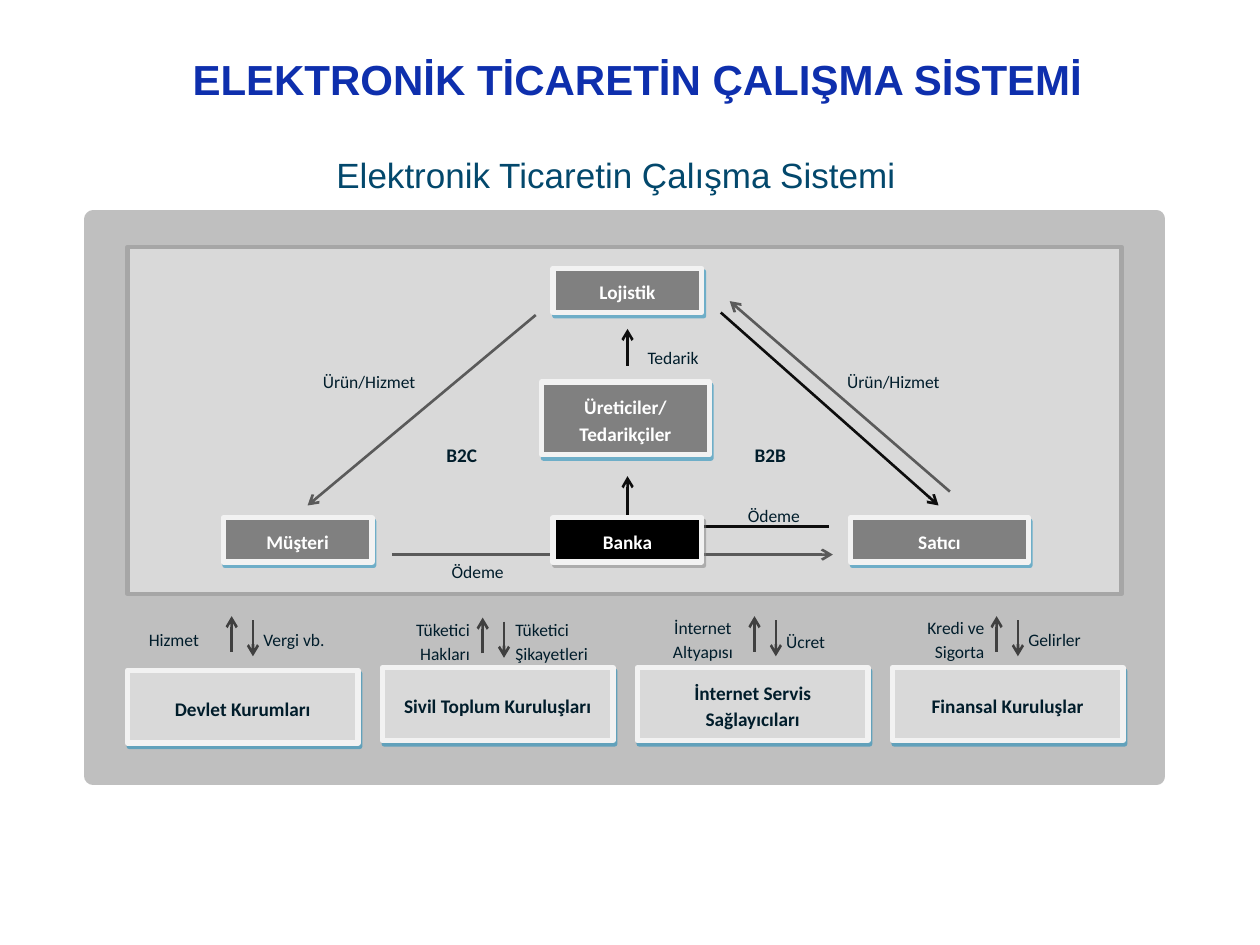
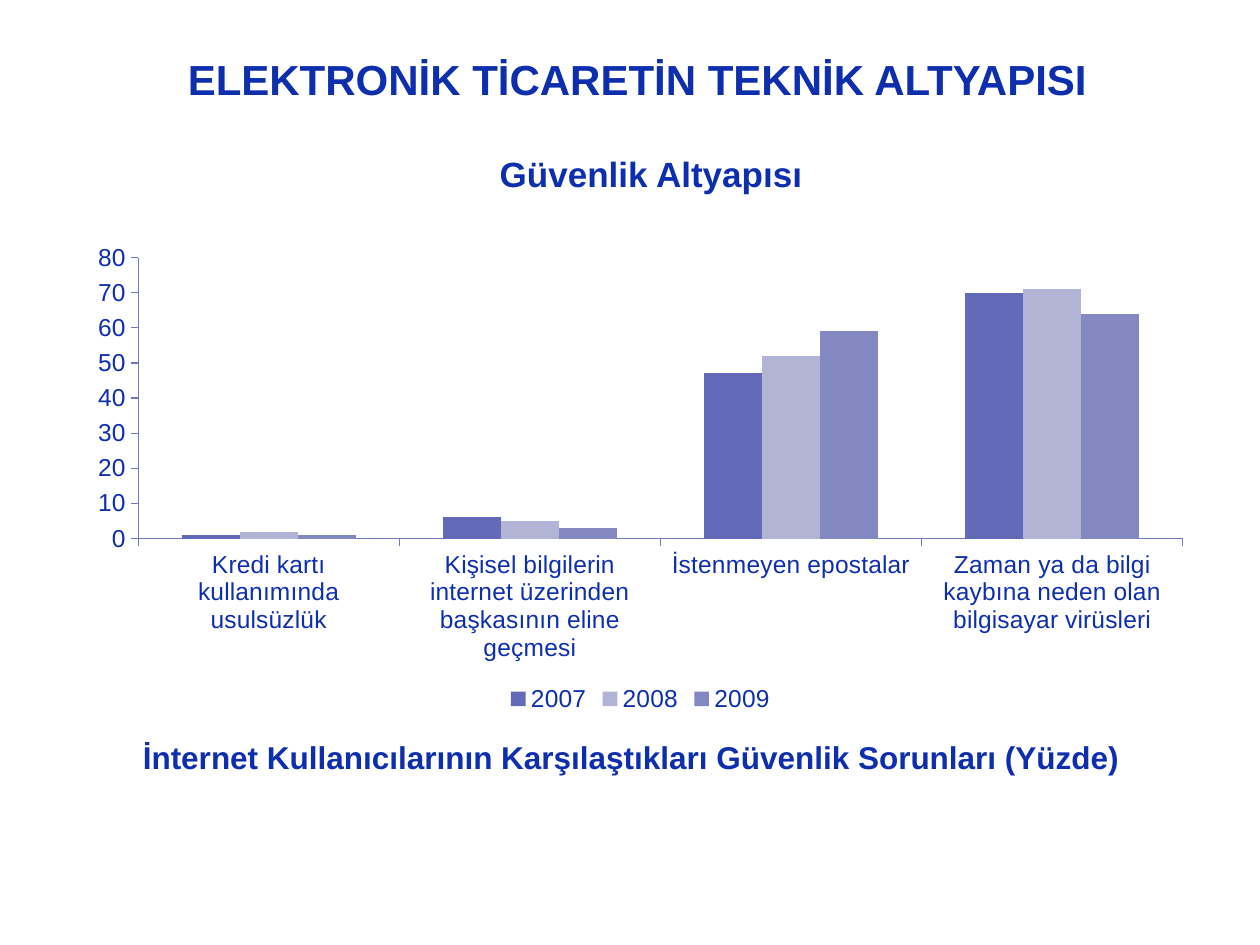
from lxml import etree
from pptx import Presentation
from pptx.chart.data import CategoryChartData
from pptx.dml.color import RGBColor
from pptx.enum.chart import XL_CHART_TYPE, XL_LEGEND_POSITION, XL_TICK_MARK
from pptx.enum.shapes import MSO_CONNECTOR, MSO_SHAPE
from pptx.enum.text import MSO_ANCHOR, PP_ALIGN
from pptx.oxml.ns import qn
from pptx.util import Cm, Pt

CLUSTERED = XL_CHART_TYPE.COLUMN_CLUSTERED
LEGEND_BOTTOM = XL_LEGEND_POSITION.BOTTOM
TICK_OUTSIDE = XL_TICK_MARK.OUTSIDE
STRAIGHT, ELBOW = MSO_CONNECTOR.STRAIGHT, MSO_CONNECTOR.ELBOW
RECTANGLE = MSO_SHAPE.RECTANGLE
TOP, MIDDLE = MSO_ANCHOR.TOP, MSO_ANCHOR.MIDDLE
LEFT, CENTER, RIGHT = PP_ALIGN.LEFT, PP_ALIGN.CENTER, PP_ALIGN.RIGHT

WHITE = RGBColor(0xFF, 0xFF, 0xFF)
BLACK = RGBColor(0x00, 0x00, 0x00)
NAVY = RGBColor(0x0E, 0x2F, 0xAD)
TEAL = RGBColor(0x03, 0x48, 0x6C)
INK = RGBColor(0x01, 0x1D, 0x2B)
SILVER = RGBColor(0xBF, 0xBF, 0xBF)
PALE = RGBColor(0xD9, 0xD9, 0xD9)
FRAME = RGBColor(0xA6, 0xA6, 0xA6)
BORDER = RGBColor(0xF2, 0xF2, 0xF2)
GRAY = RGBColor(0x80, 0x80, 0x80)
BLUE_SHADOW = RGBColor(0x04, 0x84, 0xB9)
SLATE = RGBColor(0x5A, 0x5A, 0x5A)
CHARCOAL = RGBColor(0x40, 0x40, 0x40)
COAL = RGBColor(0x0D, 0x0D, 0x0D)
AXIS = RGBColor(0x70, 0x77, 0xBC)
YEAR_COLORS = (
    RGBColor(0x63, 0x6A, 0xB7),
    RGBColor(0xB2, 0xB4, 0xD5),
    RGBColor(0x84, 0x88, 0xC2),
)

HEADING_FONT = "Arial"
DIAGRAM_FONT = "Calibri"
LABEL_HEIGHT = 0.58
TALL_LABEL_HEIGHT = 0.99


class Deck:
    def __init__(self):
        self.presentation = Presentation()
        self.presentation.slide_width = Cm(25.4)
        self.presentation.slide_height = Cm(19.05)
        self.slide = None

    def add_slide(self, title):
        layout = self.presentation.slide_layouts[6]
        self.slide = self.presentation.slides.add_slide(layout)
        self.heading(title, 1.42, 0, 22.86, 3.18, 24, anchor=MIDDLE)

    def set_text(self, shape, text, font, size, color, bold=False, align=CENTER,
                 anchor=MIDDLE, spacing=None):
        frame = shape.text_frame
        frame.word_wrap = True
        frame.vertical_anchor = anchor
        frame.text = text
        paragraph = frame.paragraphs[0]
        paragraph.alignment = align
        if spacing:
            paragraph.line_spacing = spacing
        for run in paragraph.runs:
            run.font.name = font
            run.font.size = Pt(size)
            run.font.bold = bold
            run.font.color.rgb = color

    def heading(self, text, left, top, width, height, size, color=NAVY,
                bold=True, anchor=TOP):
        box = self.slide.shapes.add_textbox(
            Cm(left), Cm(top), Cm(width), Cm(height))
        self.set_text(box, text, HEADING_FONT, size, color, bold, anchor=anchor)

    def label(self, text, left, top, width=3, height=LABEL_HEIGHT, size=10,
              bold=False, align=CENTER, anchor=MIDDLE, inset=0):
        box = self.slide.shapes.add_textbox(
            Cm(left), Cm(top), Cm(width), Cm(height))
        frame = box.text_frame
        frame.margin_left = frame.margin_right = Cm(inset)
        frame.margin_top = frame.margin_bottom = Cm(inset)
        self.set_text(box, text, DIAGRAM_FONT, size, INK, bold, align, anchor, 1.15)

    def panel(self, left, top, width, height, fill, line, line_width):
        shape = self.slide.shapes.add_shape(
            RECTANGLE, Cm(left), Cm(top), Cm(width), Cm(height))
        shape.shadow.inherit = False
        shape.fill.solid()
        shape.fill.fore_color.rgb = fill
        shape.line.color.rgb = line
        shape.line.width = Pt(line_width)
        return shape

    def node(self, text, left, top, width=3, height=0.89, fill=GRAY,
             color=WHITE, shadow=BLUE_SHADOW):
        shape = self.panel(left, top, width, height, fill, BORDER, 3)
        effects = shape._element.spPr.find(qn("a:effectLst"))
        outer = etree.SubElement(
            effects, qn("a:outerShdw"), blurRad="0", dist=str(Pt(2.2)),
            dir=str(63 * 60000), algn="ctr", rotWithShape="0")
        tint = etree.SubElement(outer, qn("a:srgbClr"), val=str(shadow))
        etree.SubElement(tint, qn("a:alpha"), val="50000")
        self.set_text(shape, text, DIAGRAM_FONT, 11, color, True, spacing=1.15)

    def arrow(self, start, end, color, kind=STRAIGHT, tip="a:tailEnd"):
        connector = self.slide.shapes.add_connector(
            kind, Cm(start[0]), Cm(start[1]), Cm(end[0]), Cm(end[1]))
        connector.line.color.rgb = color
        connector.line.width = Pt(1.5)
        properties = connector._element.spPr
        etree.SubElement(properties.find(qn("a:ln")), qn(tip), type="arrow")
        etree.SubElement(properties, qn("a:effectLst"))
        return connector

    def elbow_arrow(self, tip, corner_end, color):
        connector = self.arrow(tip, corner_end, color, ELBOW, "a:headEnd")
        adjustments = connector._element.spPr.find(
            qn("a:prstGeom")).find(qn("a:avLst"))
        etree.SubElement(adjustments, qn("a:gd"), name="adj1", fmla="val 100")

    def arrow_pair(self, left, top):
        right = left + 0.43
        self.arrow((left, top + 0.72), (left, top), CHARCOAL)
        self.arrow((right, top + 0.08), (right, top + 0.81), CHARCOAL)

    def column_chart(self, categories, series, left, top, width, height):
        data = CategoryChartData()
        data.categories = categories
        for name, values in series.items():
            data.add_series(name, values)
        chart = self.slide.shapes.add_chart(
            CLUSTERED, Cm(left), Cm(top), Cm(width), Cm(height), data).chart
        chart.font.name = HEADING_FONT
        chart.font.size = Pt(14)
        chart.font.color.rgb = NAVY
        chart.has_title = False
        chart.has_legend = True
        chart.legend.position = LEGEND_BOTTOM
        chart.legend.include_in_layout = False
        for axis in (chart.category_axis, chart.value_axis):
            axis.has_major_gridlines = False
            axis.major_tick_mark = TICK_OUTSIDE
            axis.format.line.color.rgb = AXIS
        chart.value_axis.minimum_scale = 0
        chart.value_axis.maximum_scale = 80
        chart.value_axis.major_unit = 10
        plot = chart.plots[0]
        plot.gap_width = 150
        plot.overlap = 0
        plot.vary_by_categories = False
        for column, color in zip(plot.series, YEAR_COLORS):
            column.format.fill.solid()
            column.format.fill.fore_color.rgb = color


def build_trade_system(deck):
    deck.add_slide("ELEKTRONİK TİCARETİN ÇALIŞMA SİSTEMİ")
    deck.heading("Elektronik Ticaretin Çalışma Sistemi", 1.5, 2.97, 21.84, 1.12,
                 20, TEAL, False)
    deck.panel(1.88, 4.42, 21.44, 11.23, SILVER, SILVER, 10)
    deck.panel(2.57, 4.98, 20.04, 6.99, PALE, FRAME, 2.5)

    deck.arrow((7.9, 11.18), (16.79, 11.18), SLATE)
    deck.arrow((19.15, 9.91), (14.71, 6.07), SLATE)
    deck.arrow((10.8, 6.35), (6.2, 10.19), SLATE)
    deck.arrow((14.53, 6.3), (18.92, 10.19), COAL)
    deck.arrow((12.65, 7.37), (12.65, 6.63), COAL)
    deck.elbow_arrow((12.65, 9.6), (16.71, 10.62), COAL)

    deck.node("Lojistik", 11.15, 5.41)
    deck.node("Üreticiler/ Tedarikçiler", 10.92, 7.7, 3.38, 1.47)
    deck.node("Müşteri", 4.5, 10.44)
    deck.node("Banka", 11.15, 10.44, fill=BLACK, shadow=GRAY)
    deck.node("Satıcı", 17.15, 10.44, 3.58)

    for text, left, top in (
        ("Ürün/Hizmet", 5.94, 7.37),
        ("Ürün/Hizmet", 16.51, 7.37),
        ("Tedarik", 12.07, 6.88),
        ("Ödeme", 8.13, 11.2),
        ("Ödeme", 14.1, 10.08),
    ):
        deck.label(text, left, top)
    for text, left in (("B2C", 8.61), ("B2B", 14.83)):
        deck.label(text, left, 8.81, 1.4, 0.61, 11, True, anchor=TOP, inset=0.05)

    institutions = (
        ("Devlet Kurumları", 13.51, 4.67, 12.42),
        ("Sivil Toplum Kuruluşları", 13.46, 9.73, 12.45),
        ("İnternet Servis Sağlayıcıları", 13.46, 15.21, 12.42),
        ("Finansal Kuruluşlar", 13.46, 20.09, 12.42),
    )
    for index, (name, top, arrow_left, arrow_top) in enumerate(institutions):
        deck.node(name, 2.57 + 5.14 * index, top, 4.65, 1.47, PALE, INK)
        deck.arrow_pair(arrow_left, arrow_top)

    for text, left, top, height, align in (
        ("Hizmet", 3, 12.57, LABEL_HEIGHT, LEFT),
        ("Vergi vb.", 5.31, 12.57, LABEL_HEIGHT, LEFT),
        ("Tüketici Hakları", 7.49, 12.4, TALL_LABEL_HEIGHT, RIGHT),
        ("Tüketici Şikayetleri", 10.39, 12.4, TALL_LABEL_HEIGHT, LEFT),
        ("İnternet Altyapısı", 13.18, 12.37, TALL_LABEL_HEIGHT, CENTER),
        ("Ücret", 15.85, 12.62, LABEL_HEIGHT, LEFT),
        ("Kredi ve Sigorta", 17.86, 12.37, TALL_LABEL_HEIGHT, RIGHT),
        ("Gelirler", 20.73, 12.57, LABEL_HEIGHT, LEFT),
    ):
        deck.label(text, left, top, 1.98, height, align=align)


def build_security_problems(deck):
    deck.add_slide("ELEKTRONİK TİCARETİN TEKNİK ALTYAPISI")
    deck.heading("Güvenlik Altyapısı", 1.9, 2.95, 22.45, 1.12, 20)
    problems = (
        "Kredi kartı kullanımında usulsüzlük",
        "Kişisel bilgilerin internet üzerinden başkasının eline geçmesi",
        "İstenmeyen epostalar",
        "Zaman ya da bilgi kaybına neden olan bilgisayar virüsleri",
    )
    shares = {
        "2007": (1, 6, 47, 70),
        "2008": (2, 5, 52, 71),
        "2009": (1, 3, 59, 64),
    }
    deck.column_chart(problems, shares, 1.52, 4.72, 22.78, 9.75)
    deck.heading(
        "İnternet Kullanıcılarının Karşılaştıkları Güvenlik Sorunları (Yüzde)",
        1.17, 14.76, 23.11, 1.02, 18)


def main():
    deck = Deck()
    build_trade_system(deck)
    build_security_problems(deck)
    deck.presentation.save("out.pptx")


if __name__ == "__main__":
    main()
